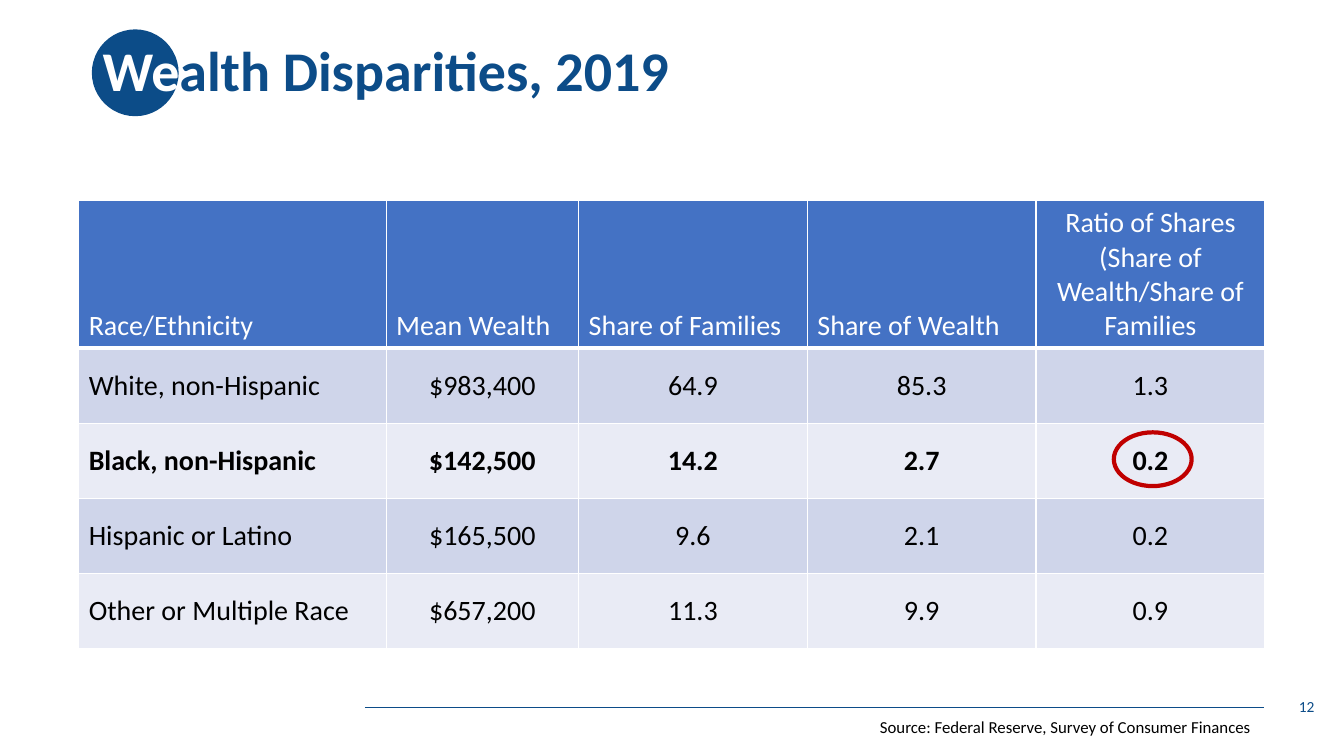
from dataclasses import dataclass

from lxml.etree import SubElement
from pptx import Presentation
from pptx.dml.color import RGBColor
from pptx.enum.shapes import MSO_CONNECTOR, MSO_SHAPE
from pptx.enum.text import MSO_ANCHOR as Anchor, MSO_AUTO_SIZE as AutoSize, PP_ALIGN as Align
from pptx.oxml.ns import qn
from pptx.util import Pt


@dataclass(frozen=True)
class Theme:
    font: str = "Calibri"
    navy: str = "0C4C88"
    white: str = "FFFFFF"
    black: str = "000000"
    red: str = "C00000"
    header: str = "4472C4"
    bands: tuple = ("CFD5EA", "E9EBF5")
    title_size: float = 40
    table_size: float = 20
    source_size: float = 12
    number_size: float = 11


THEME = Theme()
COLUMN_WIDTHS = (219.6, 137.5, 163.4, 163.4, 163.4)
HEADER_HEIGHT, ROW_HEIGHT = 105.4, 53.7
HEADINGS = (
    "Race/Ethnicity", "Mean Wealth", "Share of Families", "Share of Wealth",
    "Ratio of Shares (Share of Wealth/Share of Families",
)
GROUPS = (
    ("White, non-Hispanic", "$983,400", "64.9", "85.3", "1.3"),
    ("Black, non-Hispanic", "$142,500", "14.2", "2.7", "0.2"),
    ("Hispanic or Latino", "$165,500", "9.6", "2.1", "0.2"),
    ("Other or Multiple Race", "$657,200", "11.3", "9.9", "0.9"),
)
HIGHLIGHTED_GROUP = "Black, non-Hispanic"


def rgb(color):
    return RGBColor.from_string(color)


def write(paragraph, text, *, size, color=THEME.black, bold=False, align=Align.LEFT):
    paragraph.alignment = align
    run = paragraph.add_run()
    run.text = text
    run.font.name = THEME.font
    run.font.size = Pt(size)
    run.font.bold = bold
    run.font.color.rgb = rgb(color)


def add_box(slide, left, top, width, height, anchor=Anchor.MIDDLE, wrap=True):
    box = slide.shapes.add_textbox(Pt(left), Pt(top), Pt(width), Pt(height))
    frame = box.text_frame
    frame.word_wrap = wrap
    frame.vertical_anchor = anchor
    frame.auto_size = AutoSize.NONE if wrap else AutoSize.SHAPE_TO_FIT_TEXT
    return frame.paragraphs[0]


def add_ellipse(slide, left, top, width, height, fill=None, line=None, weight=0):
    ellipse = slide.shapes.add_shape(MSO_SHAPE.OVAL, Pt(left), Pt(top), Pt(width), Pt(height))
    ellipse.shadow.inherit = False
    if fill:
        ellipse.fill.solid()
        ellipse.fill.fore_color.rgb = rgb(fill)
    else:
        ellipse.fill.background()
    if line:
        ellipse.line.color.rgb = rgb(line)
        ellipse.line.width = Pt(weight)
    else:
        ellipse.line.fill.background()


def add_rule(slide, left, right, y):
    rule = slide.shapes.add_connector(MSO_CONNECTOR.STRAIGHT, Pt(left), Pt(y), Pt(right), Pt(y))
    rule.line.color.rgb = rgb(THEME.navy)
    rule.line.width = Pt(0.5)
    SubElement(rule._element.spPr, qn("a:effectLst"))


def add_title(slide, highlighted, rest):
    title = add_box(slide, 66.2, 0, 828, 104.4)
    title.line_spacing = 0.9
    for text, color in ((highlighted, THEME.white), (rest, THEME.navy)):
        write(title, text, size=THEME.title_size, color=color, bold=True)


def set_borders(cell, top, bottom):
    properties = cell._tc.get_or_add_tcPr()
    for side, weight in (("L", 1), ("R", 1), ("T", top), ("B", bottom)):
        border = SubElement(properties, qn(f"a:ln{side}"), w=str(Pt(weight)))
        paint = SubElement(border, qn("a:solidFill"))
        SubElement(paint, qn("a:srgbClr"), val=THEME.white)


def fill_cell(cell, text, fill, anchor, top=1, bottom=1, **text_format):
    set_borders(cell, top, bottom)
    cell.fill.solid()
    cell.fill.fore_color.rgb = rgb(fill)
    cell.vertical_anchor = anchor
    write(cell.text_frame.paragraphs[0], text, size=THEME.table_size, **text_format)


def add_wealth_table(slide, left, top):
    heights = [HEADER_HEIGHT] + [ROW_HEIGHT] * len(GROUPS)
    table = slide.shapes.add_table(
        len(heights), len(HEADINGS), Pt(left), Pt(top),
        Pt(sum(COLUMN_WIDTHS)), Pt(sum(heights)),
    ).table
    for column, width in zip(table.columns, COLUMN_WIDTHS):
        column.width = Pt(width)
    for row, height in zip(table.rows, heights):
        row.height = Pt(height)

    for index, heading in enumerate(HEADINGS):
        align = Align.CENTER if index == len(HEADINGS) - 1 else Align.LEFT
        fill_cell(table.cell(0, index), heading, THEME.header, Anchor.BOTTOM,
                  bottom=3, color=THEME.white, align=align)
    for row, group in enumerate(GROUPS, start=1):
        for index, value in enumerate(group):
            fill_cell(table.cell(row, index), value, THEME.bands[(row - 1) % 2], Anchor.MIDDLE,
                      top=3 if row == 1 else 1, bold=group[0] == HIGHLIGHTED_GROUP,
                      align=Align.CENTER if index else Align.LEFT)


def main():
    presentation = Presentation()
    presentation.slide_width, presentation.slide_height = Pt(960), Pt(540)
    slide = presentation.slides.add_slide(presentation.slide_layouts[6])

    add_rule(slide, 260.6, 902.9, 505)
    add_ellipse(slide, 65.6, 21, 62, 62, fill=THEME.navy)
    add_title(slide, "We", "alth Disparities, 2019")
    add_wealth_table(slide, 56.2, 143.4)
    write(add_box(slide, 730, 490.5, 216, 28.8), "12",
          size=THEME.number_size, color=THEME.navy, align=Align.RIGHT)
    add_ellipse(slide, 795.6, 308.8, 55.6, 38.4, line=THEME.red, weight=3)
    write(add_box(slide, 621.4, 508.4, 282.2, 21.8, anchor=Anchor.TOP, wrap=False),
          "Source: Federal Reserve, Survey of Consumer Finances", size=THEME.source_size)

    presentation.save("out.pptx")


if __name__ == "__main__":
    main()
